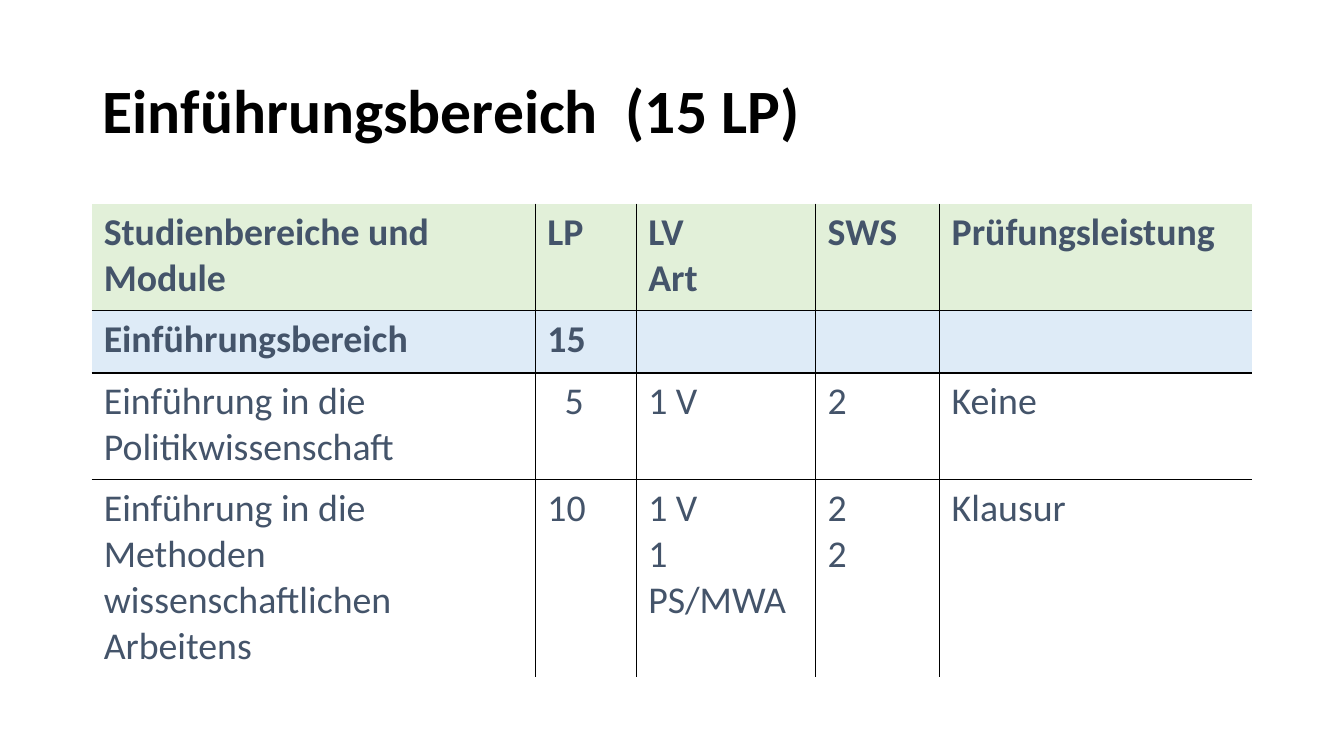
from lxml import etree
from pptx import Presentation
from pptx.dml.color import RGBColor
from pptx.enum import text
from pptx.oxml.ns import qn
from pptx.util import Inches, Pt

HUES = {"title": "000000", "text": "44546A", "line": "000000",
        "head": "E2F0D9", "area": "DEEBF7"}
COLS = [4.4, 1, 1.78, 1.23, 3.1]
HIGHS = [1.06, 0.62, 1.06, 1.96]
FILLS = ["head", "area", None, None]
ROWS = [
    ["Studienbereiche und Module", "LP", "LV\vArt", "SWS", "Prüfungsleistung"],
    ["Einführungsbereich", "15", "", "", ""],
    ["Einführung in die Politikwissenschaft", "5", "1 V", "2", "Keine"],
    ["Einführung in die Methoden wissenschaftlichen Arbeitens", "10",
     "1 V\v1 PS/MWA", "2\v2", "Klausur"],
]


def style(para, size, hue, bold):
    font = para.font
    font.name, font.size, font.bold = "Calibri", Pt(size), bold
    font.color.rgb = RGBColor.from_string(HUES[hue])


def rule(cell, sides):
    """Draw a line on each side marked True and clear the others."""
    props = cell._tc.get_or_add_tcPr()
    for spot, (side, drawn) in enumerate(sides.items()):
        line = etree.Element(qn("a:ln" + side), w=str(Pt(1)))
        props.insert(spot, line)
        if drawn:
            fill = etree.SubElement(line, qn("a:solidFill"))
            etree.SubElement(fill, qn("a:srgbClr"), val=HUES["line"])
        else:
            etree.SubElement(line, qn("a:noFill"))


deck = Presentation()
deck.slide_width, deck.slide_height = Inches(13.33), Inches(7.5)
slide = deck.slides.add_slide(deck.slide_layouts[5])

# Title
title = slide.shapes.title
title.left, title.top = Inches(0.92), Inches(0.4)
title.width, title.height = Inches(11.5), Inches(1.45)
frame = title.text_frame
frame.text = "Einführungsbereich  (15 LP)"
frame.vertical_anchor = text.MSO_ANCHOR.MIDDLE
para = frame.paragraphs[0]
para.alignment, para.line_spacing = text.PP_ALIGN.LEFT, 0.9
style(para, 44, "title", True)

# Table grid
table = slide.shapes.add_table(
    len(ROWS), len(COLS), Inches(0.91), Inches(2.02),
    Inches(sum(COLS)), Inches(sum(HIGHS))).table
table.first_row = table.horz_banding = False
for col, wide in zip(table.columns, COLS):
    col.width = Inches(wide)
for row, high in zip(table.rows, HIGHS):
    row.height = Inches(high)

# Cells, with lines on the inner edges only
for r, (words, hue) in enumerate(zip(ROWS, FILLS)):
    for c, word in enumerate(words):
        cell = table.cell(r, c)
        indent = 0.17 if word == "5" else 0
        cell.margin_left = Inches(0.12 + indent)
        cell.margin_right = Inches(0.12)
        cell.margin_top = cell.margin_bottom = Inches(0.06)
        if hue:
            cell.fill.solid()
            cell.fill.fore_color.rgb = RGBColor.from_string(HUES[hue])
        else:
            cell.fill.background()
        rule(cell, {"L": c > 0, "R": c < len(COLS) - 1,
                    "T": r > 0, "B": r < len(ROWS) - 1})
        para = cell.text_frame.paragraphs[0]
        para.text = word
        style(para, 27, "text", hue is not None)

deck.save("out.pptx")
